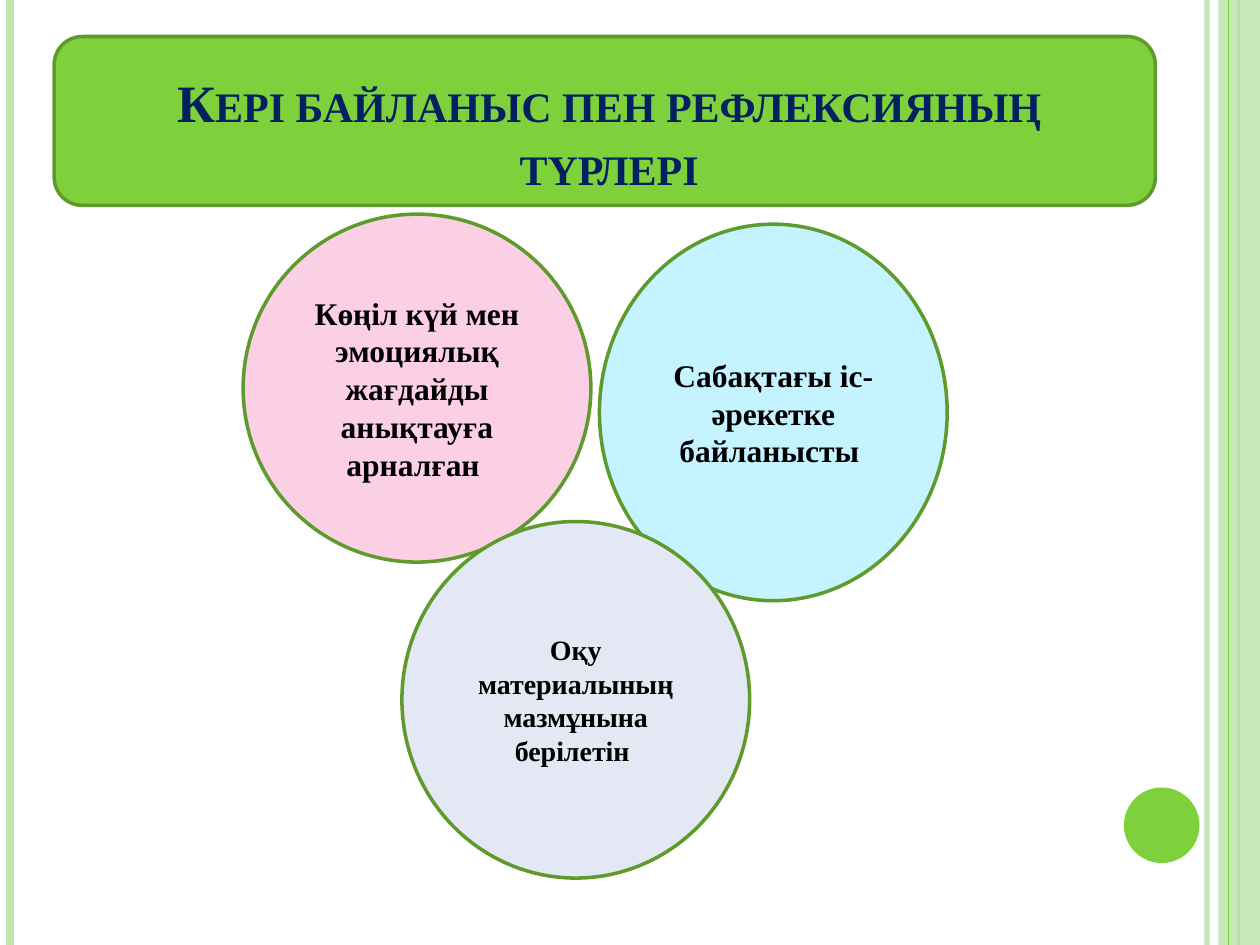
from lxml.etree import SubElement
from pptx import Presentation
from pptx.dml.color import RGBColor
from pptx.enum.shapes import MSO_CONNECTOR, MSO_SHAPE
from pptx.enum.text import MSO_ANCHOR, PP_ALIGN
from pptx.oxml.ns import qn
from pptx.util import Inches, Pt

WHITE = RGBColor(0xFF, 0xFF, 0xFF)
BLACK = RGBColor(0, 0, 0)
NAVY = RGBColor(0x00, 0x20, 0x60)
GREEN = RGBColor(0x7F, 0xD1, 0x3B)
DARK = RGBColor(0x5E, 0x9B, 0x2C)
PALE = RGBColor(0xC0, 0xE5, 0xAF)
PINK = RGBColor(0xFB, 0xD0, 0xE4)
AQUA = RGBColor(0xC5, 0xF3, 0xFF)
LILAC = RGBColor(0xE3, 0xE8, 0xF4)
FONT = "Times New Roman"
WIDE, HIGH = 10, 7.5


def fade(part, share):
    """Set the opacity of every solid colour in a part, in percent."""
    for tint in part._element.spPr.iter(qn("a:srgbClr")):
        SubElement(tint, qn("a:alpha")).set("val", str(share * 1000))


def shape(slide, kind, box, fill, edge=None):
    """Add a flat shape with an optional two-point edge."""
    part = slide.shapes.add_shape(kind, *map(Inches, box))
    part.shadow.inherit = False
    part.fill.solid()
    part.fill.fore_color.rgb = fill
    if edge is None:
        part.line.fill.background()
    else:
        part.line.color.rgb = edge
        part.line.width = Pt(2)
    return part


def stripe(slide, left, tint, width):
    """Add an upright line over the full height of the slide."""
    line = slide.shapes.add_connector(
        MSO_CONNECTOR.STRAIGHT, Inches(left), 0, Inches(left), Inches(HIGH))
    line.line.color.rgb = tint
    line.line.width = Pt(width)
    SubElement(line._element.spPr, qn("a:effectLst"))
    return line


def write(frame, text, size, tint, anchor):
    """Write one centred bold run into a text frame."""
    frame.word_wrap = True
    frame.vertical_anchor = anchor
    para = frame.paragraphs[0]
    para.alignment = PP_ALIGN.CENTER
    run = para.add_run()
    run.text = text
    font = run.font
    font.name, font.size, font.bold = FONT, Pt(size), True
    font.color.rgb = tint
    return run


def frame(slide, wide, high):
    """Draw the side stripes, the right band and the corner dot."""
    fade(stripe(slide, wide - 0.42, PALE, 3), 93)
    stripe(slide, 0.08, PALE, 4.5)
    stripe(slide, wide - 0.17, GREEN, 1.5)
    band = shape(slide, MSO_SHAPE.RECTANGLE, (wide - 0.33, 0, 0.33, high), PALE)
    fade(band, 87)
    stripe(slide, wide - 0.25, GREEN, 0.75)
    shape(slide, MSO_SHAPE.OVAL, (wide - 1.08, high - 1.25, 0.6, 0.6), GREEN)


def header(slide, box, text):
    """Draw the green panel and set the title on top of it."""
    left, top, wide, high = box
    shape(slide, MSO_SHAPE.ROUNDED_RECTANGLE, box, GREEN, DARK)
    title = slide.shapes.title
    title.left, title.top = Inches(left + 0.32), Inches(top + 0.07)
    title.width, title.height = Inches(wide - 0.57), Inches(high - 0.09)
    run = write(title.text_frame, text, 30, NAVY, MSO_ANCHOR.BOTTOM)
    run.font._element.set("cap", "small")
    slide.shapes._spTree.append(title._element)


def circles(slide, box, items):
    """Place the circles by their shares of the given box."""
    left, top, wide, high = box
    for across, down, tall, fill, size, text in items:
        place = left + across * wide, top + down * high, 2.76, tall * high
        disc = shape(slide, MSO_SHAPE.OVAL, place, fill, DARK)
        write(disc.text_frame, text, size, BLACK, MSO_ANCHOR.MIDDLE)


def main():
    """Build and save the slide."""
    deck = Presentation()
    deck.slide_width, deck.slide_height = Inches(WIDE), Inches(HIGH)
    slide = deck.slides.add_slide(deck.slide_layouts[5])
    slide.background.fill.solid()
    slide.background.fill.fore_color.rgb = WHITE
    frame(slide, WIDE, HIGH)
    header(slide, (0.43, 0.29, 8.74, 1.34),
           "Кері байланыс пен рефлексияның түрлері")
    circles(slide, (1.93, 1.7, 5.6, 5.28), (
        (0.505, 0.015, 0.566, AQUA, 18, "Сабақтағы іс-әрекетке байланысты "),
        (0, 0, 0.523, PINK, 18,
         "Көңіл күй мен эмоциялық жағдайды анықтауға арналған "),
        (0.225, 0.462, 0.536, LILAC, 16,
         "Оқу материалының мазмұнына берілетін "),
    ))
    deck.save("out.pptx")


if __name__ == "__main__":
    main()
